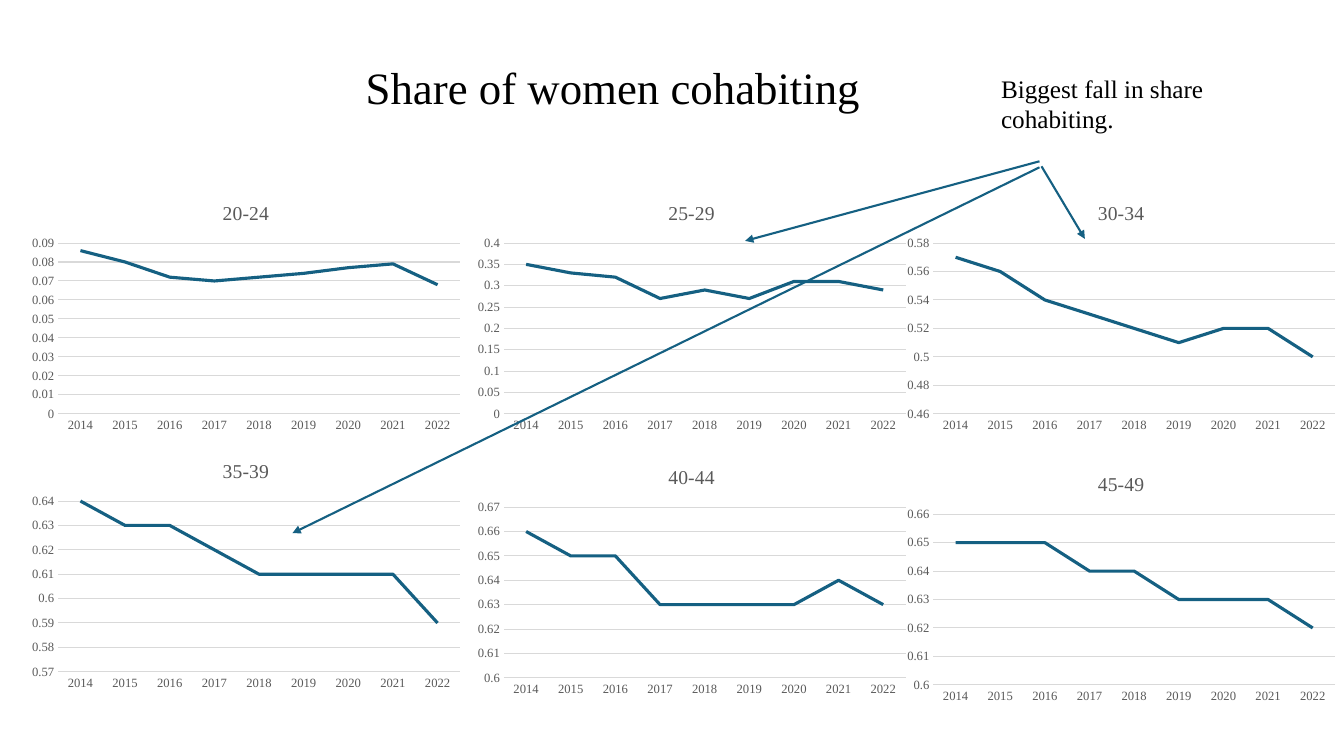
"""Build a slide of six line charts showing the share of women cohabiting by age."""
import lxml.etree
import pptx
import pptx.chart.data
import pptx.dml.color
import pptx.enum.chart
import pptx.enum.shapes
import pptx.enum.text
import pptx.oxml.ns
import pptx.util

Inches = pptx.util.Inches
Pt = pptx.util.Pt
RGBColor = pptx.dml.color.RGBColor

BLACK = RGBColor(0x00, 0x00, 0x00)
BLUE = RGBColor(0x15, 0x60, 0x82)
GRAY = RGBColor(0x59, 0x59, 0x59)
LIGHT_GRAY = RGBColor(0xD9, 0xD9, 0xD9)
FONT_NAME = "Times New Roman"

YEARS = [str(year) for year in range(2014, 2023)]
CHART_LEFTS = (0.23, 4.65, 8.91)
CHART_WIDTH = 4.42
CHART_HEIGHT = 2.49

AGE_GROUPS = (
    ("20-24", 1.85, (0, 0.09, 0.01),
     (0.086, 0.08, 0.072, 0.07, 0.072, 0.074, 0.077, 0.079, 0.068)),
    ("25-29", 1.85, (0, 0.4, 0.05),
     (0.35, 0.33, 0.32, 0.27, 0.29, 0.27, 0.31, 0.31, 0.29)),
    ("30-34", 1.85, (0.46, 0.58, 0.02),
     (0.57, 0.56, 0.54, 0.53, 0.52, 0.51, 0.52, 0.52, 0.5)),
    ("35-39", 4.41, (0.57, 0.64, 0.01),
     (0.64, 0.63, 0.63, 0.62, 0.61, 0.61, 0.61, 0.61, 0.59)),
    ("40-44", 4.47, (0.6, 0.67, 0.01),
     (0.66, 0.65, 0.65, 0.63, 0.63, 0.63, 0.63, 0.64, 0.63)),
    ("45-49", 4.54, (0.6, 0.66, 0.01),
     (0.65, 0.65, 0.65, 0.64, 0.64, 0.63, 0.63, 0.63, 0.62)),
)

ARROWS = (
    ((10.31, 1.6), (7.39, 2.39)),
    ((10.33, 1.65), (10.76, 2.37)),
    ((10.31, 1.66), (2.9, 5.29)),
)


def set_font(font, size, color):
    font.name = FONT_NAME
    font.size = Pt(size)
    font.bold = False
    font.color.rgb = color


def set_line(line, width, color):
    line.width = Pt(width)
    line.color.rgb = color


def write_text(text_frame, text, size, color):
    paragraph = text_frame.paragraphs[0]
    run = paragraph.add_run()
    run.text = text
    set_font(run.font, size, color)
    return paragraph


def add_title(slide, text):
    title = slide.shapes.title
    title.left, title.top = Inches(3.25), Inches(0.5)
    title.width, title.height = Inches(5.66), Inches(0.79)
    title.text_frame.word_wrap = True
    title.text_frame.vertical_anchor = pptx.enum.text.MSO_ANCHOR.MIDDLE
    paragraph = write_text(title.text_frame, text, 32, BLACK)
    paragraph.alignment = pptx.enum.text.PP_ALIGN.CENTER
    paragraph.line_spacing = 0.9


def add_note(slide, text):
    note = slide.shapes.add_textbox(
        Inches(9.83), Inches(0.68), Inches(2.25), Inches(0.71))
    note.text_frame.word_wrap = True
    note.text_frame.auto_size = pptx.enum.text.MSO_AUTO_SIZE.SHAPE_TO_FIT_TEXT
    write_text(note.text_frame, text, 18, BLACK)


def format_axes(chart, scale):
    value_axis = chart.value_axis
    value_axis.minimum_scale, value_axis.maximum_scale, value_axis.major_unit = scale
    value_axis.has_major_gridlines = True
    set_line(value_axis.major_gridlines.format.line, 0.75, LIGHT_GRAY)
    value_axis.format.line.fill.background()
    set_line(chart.category_axis.format.line, 0.75, LIGHT_GRAY)
    for axis in (chart.category_axis, value_axis):
        axis.major_tick_mark = pptx.enum.chart.XL_TICK_MARK.NONE
        axis.minor_tick_mark = pptx.enum.chart.XL_TICK_MARK.NONE
        set_font(axis.tick_labels.font, 9, GRAY)


def add_line_chart(slide, left, top, age_group, scale, shares):
    chart_data = pptx.chart.data.CategoryChartData()
    chart_data.categories = YEARS
    chart_data.add_series(age_group, shares)
    chart = slide.shapes.add_chart(
        pptx.enum.chart.XL_CHART_TYPE.LINE, Inches(left), Inches(top),
        Inches(CHART_WIDTH), Inches(CHART_HEIGHT), chart_data).chart
    set_font(chart.font, 10, BLACK)
    chart.has_legend = False
    chart.has_title = True
    write_text(chart.chart_title.text_frame, age_group, 14, GRAY)
    format_axes(chart, scale)
    plot = chart.plots[0]
    plot.vary_by_categories = False
    series = plot.series[0]
    series.smooth = False
    series.marker.style = pptx.enum.chart.XL_MARKER_STYLE.NONE
    set_line(series.format.line, 2.25, BLUE)


def add_arrow(slide, start, end):
    arrow = slide.shapes.add_connector(
        pptx.enum.shapes.MSO_CONNECTOR.STRAIGHT,
        *(Inches(length) for length in start + end))
    set_line(arrow.line, 1.5, BLUE)
    qualified_name = pptx.oxml.ns.qn
    properties = arrow.element.spPr
    line = properties.find(qualified_name("a:ln"))
    lxml.etree.SubElement(line, qualified_name("a:tailEnd"), type="triangle")
    lxml.etree.SubElement(properties, qualified_name("a:effectLst"))


def main():
    presentation = pptx.Presentation()
    presentation.slide_width = Inches(13.33)
    presentation.slide_height = Inches(7.5)
    slide = presentation.slides.add_slide(presentation.slide_layouts[5])
    add_title(slide, "Share of women cohabiting")
    for index, (age_group, top, scale, shares) in enumerate(AGE_GROUPS):
        left = CHART_LEFTS[index % len(CHART_LEFTS)]
        add_line_chart(slide, left, top, age_group, scale, shares)
    add_note(slide, "Biggest fall in share cohabiting.")
    for start, end in ARROWS:
        add_arrow(slide, start, end)
    presentation.save("out.pptx")


if __name__ == "__main__":
    main()
